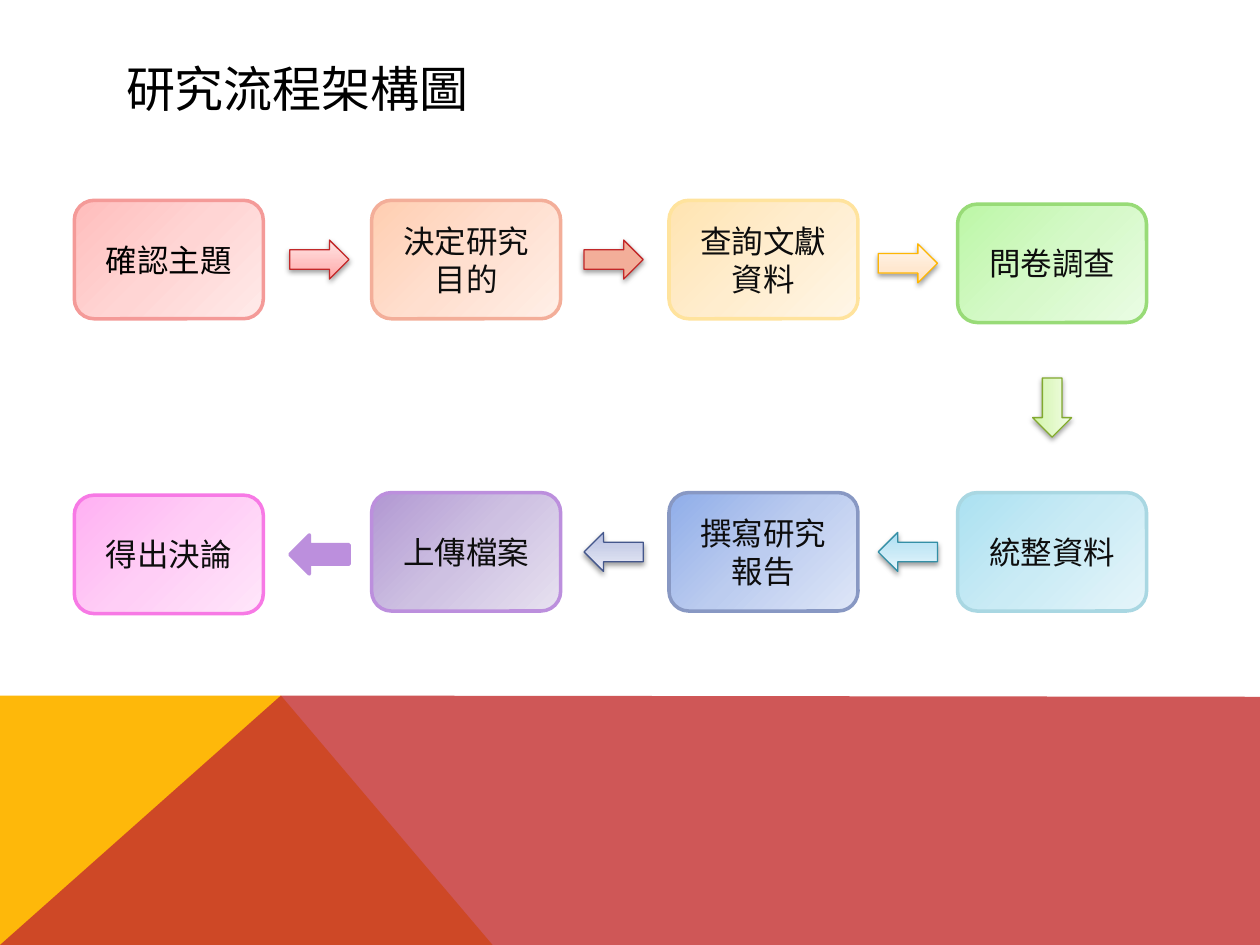
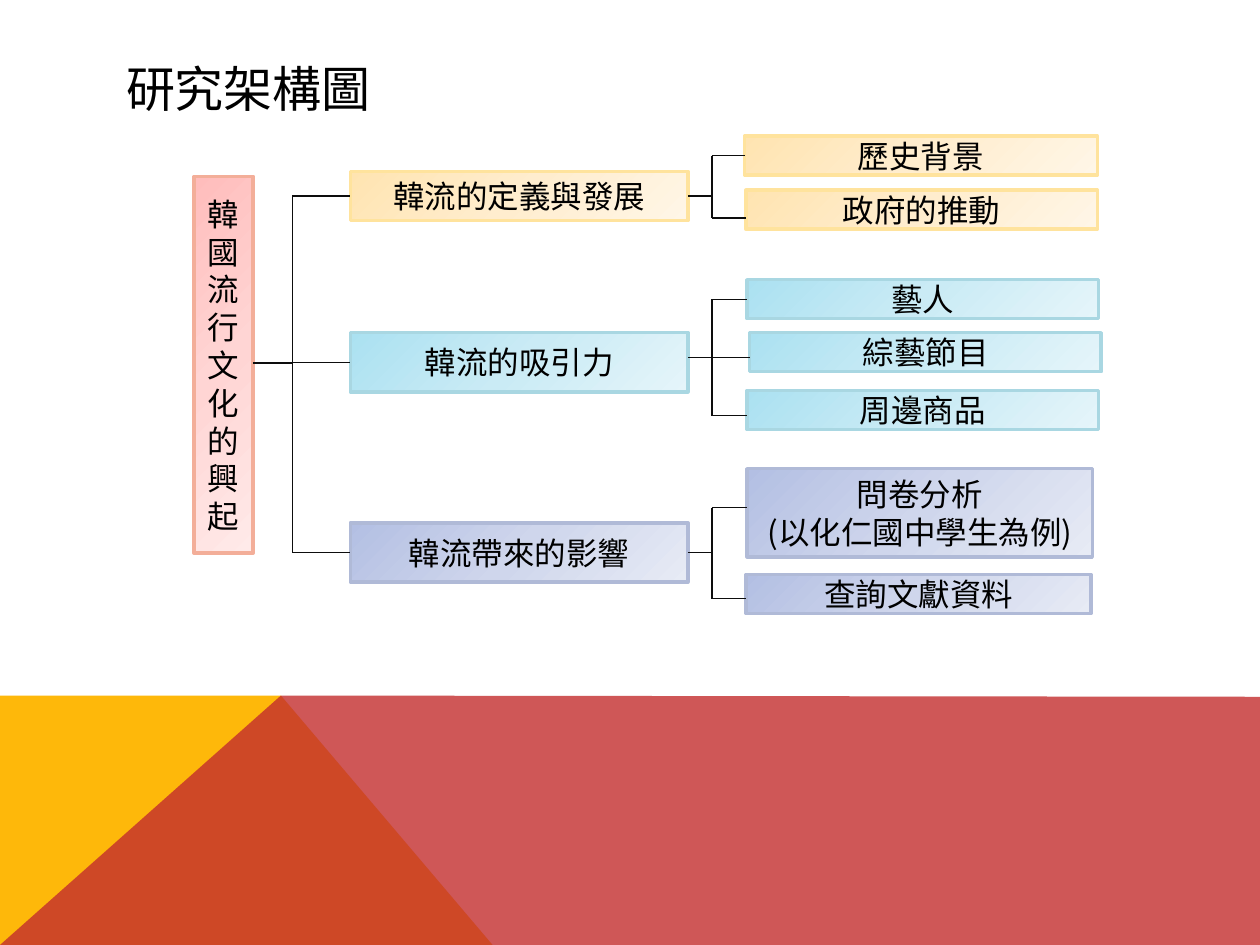
from lxml import etree
from pptx import Presentation
from pptx.dml.color import RGBColor
from pptx.enum.shapes import MSO_CONNECTOR, MSO_SHAPE
from pptx.enum.text import MSO_ANCHOR, PP_ALIGN
from pptx.oxml.ns import nsdecls, qn
from pptx.oxml import parse_xml
from pptx.util import Inches, Pt

W, H = 10, 7.5
FONT = "Noto Sans CJK SC"
BLACK, INK = "000000", "0D0D0D"

# Bottom bands: outline as points, colour, opacity in percent
BANDS = [
    ([(0, 7.5), (0, 5.52), (2.23, 5.52), (3.91, 7.5)], "FEB80A", 100),
    ([(0, 7.5), (2.23, 5.52), (10, 5.53), (10, 7.5)], "C32D2E", 80),
]

# Box looks: three gradient colours, then the border
RED = ("FFBDBC", "FFD5D4", "FFEAE9", "F49A98")
ROOT_RED = RED[:3] + ("F3AE99",)
ORANGE = ("FFCEB1", "FFDFCF", "FFEFE7", "F3AE99")
YELLOW = ("FFE4B1", "FFEDCE", "FFF6E7", "FFE39D")
GREEN = ("BCF7A6", "D5F9C8", "EAFCE4", "98DB77")
CYAN = ("ABE1F1", "CAEBF5", "E5F5FA", "A9D7E2")
BLUE = ("8FADE9", "BCCCEF", "DEE6F7", "8898C3")
PURPLE = ("B197D2", "CEC1E2", "E7E1F0", "BC8FDD")
PINK = ("FFB0F2", "FFCEF6", "FFE6FA", "F779E5")
LAVENDER = ("B3BFE3", "CFD6EC", "E7EBF5", "B0BAD7")

# Slide 1: steps in reading order as (text, look, column, top)
COLUMNS = (0.59, 2.95, 5.31, 7.6)
STEP_W, STEP_H = 1.5, 0.94
STEPS = [
    ("確認主題", RED, 0, 1.59),
    ("決定研究目的", ORANGE, 1, 1.59),
    ("查詢文獻資料", YELLOW, 2, 1.59),
    ("問卷調查", GREEN, 3, 1.62),
    ("統整資料", CYAN, 3, 3.91),
    ("撰寫研究報告", BLUE, 2, 3.91),
    ("上傳檔案", PURPLE, 1, 3.91),
    ("得出決論", PINK, 0, 3.93),
]
# Arrows between consecutive steps: (fill colours, border)
ARROW_W, ARROW_H = 0.47, 0.31
ARROW_X, ARROW_PITCH = 2.3, 2.335
ARROWS = [
    (("FFA3A3", "FFBEBE", "FFE6E6"), "C22829"),
    (("F3AE99",), "C22829"),
    (("FFDFBC", "FFE8D0", "FFF6ED"), "FEB604"),
    (("D0F5A3", "DDF7BF", "F2FDE6"), "82A92F"),
    (("A5DDF3", "C1E6F5", "E6F6FC"), "348FA6"),
    (("B2BBE0", "C9CFE8", "EAECF7"), "44578C"),
    (("BC8FDD",), "BC8FDD"),
]

# Slide 2: root, branches and leaves
ROOT = ("韓國流行文化的興起", (1.54, 1.4, 0.47, 2.99))
ROOT_Y, ROOT_TRUNK, LEAF_TRUNK = 2.88, 2.32, 5.65
BRANCH_X, BRANCH_W = 2.78, 2.68
# Branch: text, look, top, height, stem height (None = middle), leaves
# Leaf: text, box, height of its line (None = middle)
BRANCHES = [
    ("韓流的定義與發展", YELLOW, 1.36, 0.39, None, [
        ("歷史背景", (5.91, 1.08, 2.8, 0.31), None),
        ("政府的推動", (5.92, 1.51, 2.79, 0.31), 1.73)]),
    ("韓流的吸引力", CYAN, 2.64, 0.47, 2.84, [
        ("藝人", (5.93, 2.22, 2.79, 0.31), None),
        ("綜藝節目", (5.95, 2.64, 2.79, 0.31), 2.84),
        ("周邊商品", (5.93, 3.1, 2.79, 0.31), 3.3)]),
    ("韓流帶來的影響", LAVENDER, 4.15, 0.47, None, [
        ("問卷分析\n(以化仁國中學生為例)", (5.93, 3.72, 2.74, 0.7), 4.03),
        ("查詢文獻資料", (5.92, 4.56, 2.74, 0.31), 4.75)]),
]


def rgb(value):
    return RGBColor.from_string(value)


def format_text(tf, size, color, align):
    tf.vertical_anchor = MSO_ANCHOR.MIDDLE
    for p in tf.paragraphs:
        p.alignment = align
        for r in p.runs:
            r.font.size, r.font.bold = Pt(size), False
            r.font.color.rgb = rgb(color)
            r.font.name = FONT
            etree.SubElement(r._r.get_or_add_rPr(), qn("a:ea")).set("typeface", FONT)


def paint(sp, colors, middle, angle, border, width):
    """Solid fill for one colour, linear gradient for three."""
    sp.shadow.inherit = False
    sp.line.color.rgb, sp.line.width = rgb(border), Pt(width)
    sp.fill.solid()
    sp.fill.fore_color.rgb = rgb(colors[0])
    if len(colors) > 1:
        stops = "".join(f'<a:gs pos="{pos * 1000}"><a:srgbClr val="{c}"/></a:gs>'
                        for pos, c in zip((0, middle, 100), colors))
        solid = sp._element.spPr.find(qn("a:solidFill"))
        solid.getparent().replace(solid, parse_xml(
            f'<a:gradFill {nsdecls("a")} rotWithShape="1"><a:gsLst>{stops}</a:gsLst>'
            f'<a:lin ang="{angle * 60000}" scaled="0"/></a:gradFill>'))


def add_box(s, kind, box, text, look, color=BLACK):
    sp = s.shapes.add_shape(kind, *map(Inches, box))
    paint(sp, look[:3], 50, 45, look[3], 2)
    sp.text_frame.text = text
    format_text(sp.text_frame, 18, color, PP_ALIGN.CENTER)
    return sp


def add_arrow(s, x, y, turn, colors, border, raised):
    sp = s.shapes.add_shape(MSO_SHAPE.RIGHT_ARROW, *map(Inches, (x, y, ARROW_W, ARROW_H)))
    sp.rotation = turn
    paint(sp, colors, 35, 270, border, 0.75 if raised else 2)
    if raised:
        effects = sp._element.spPr.find(qn("a:effectLst"))
        effects.append(parse_xml(
            f'<a:outerShdw {nsdecls("a")} blurRad="{Pt(3.1)}" dist="{Pt(1.6)}" dir="5400000" '
            'rotWithShape="0"><a:srgbClr val="000000"><a:alpha val="38000"/></a:srgbClr>'
            '</a:outerShdw>'))


def add_line(s, x1, y1, x2, y2, start=None, end=None):
    c = s.shapes.add_connector(MSO_CONNECTOR.STRAIGHT, *map(Inches, (x1, y1, x2, y2)))
    if start is not None:
        c.begin_connect(start, 3)
    if end is not None:
        c.end_connect(end, 1)
    c.line.color.rgb, c.line.width = rgb(INK), Pt(0.75)
    etree.SubElement(c._element.spPr, qn("a:effectLst"))


def add_slide(prs, title):
    s = prs.slides.add_slide(prs.slide_layouts[5])
    for points, color, opacity in BANDS:
        path = [(Inches(x), Inches(y)) for x, y in points]
        builder = s.shapes.build_freeform(*path[0])
        builder.add_line_segments(path[1:], close=True)
        sp = builder.convert_to_shape()
        sp.shadow.inherit = False
        sp.line.fill.background()
        sp.fill.solid()
        sp.fill.fore_color.rgb = rgb(color)
        if opacity < 100:
            clr = sp._element.spPr.find(".//" + qn("a:srgbClr"))
            etree.SubElement(clr, qn("a:alpha")).set("val", str(opacity * 1000))
    t = s.shapes.title
    t.left, t.top, t.width, t.height = map(Inches, (0.9, 0.4, 8.22, 0.6))
    t.text_frame.text = title
    format_text(t.text_frame, 28, BLACK, PP_ALIGN.LEFT)
    return s


def build_flow(prs):
    s = add_slide(prs, "研究流程架構圖")
    for i, (text, look, col, top) in enumerate(STEPS):
        add_box(s, MSO_SHAPE.ROUNDED_RECTANGLE, (COLUMNS[col], top, STEP_W, STEP_H),
                text, look, INK if i else BLACK)
    # Each arrow lies between two steps, level with the one it points to
    for (_, _, col, top), (_, _, to, to_top), (colors, border) in zip(STEPS, STEPS[1:], ARROWS):
        if col == to:
            turn = 90
            x = COLUMNS[col] + (STEP_W - ARROW_W) / 2
            y = (top + STEP_H + to_top - ARROW_H) / 2
        else:
            turn = 0 if to > col else 180
            x = ARROW_X + ARROW_PITCH * min(col, to)
            y = to_top + (STEP_H - ARROW_H) / 2
        add_arrow(s, x, y, turn, colors, border, raised=border != colors[0])


def build_tree(prs):
    s = add_slide(prs, "研究架構圖")
    text, box = ROOT
    add_box(s, MSO_SHAPE.RECTANGLE, box, text, ROOT_RED)
    add_line(s, box[0] + box[2], ROOT_Y, ROOT_TRUNK, ROOT_Y)
    branch_ys = []
    for text, look, top, height, stem_y, leaves in BRANCHES:
        middle = top + height / 2
        branch_ys.append(middle)
        branch = add_box(s, MSO_SHAPE.RECTANGLE, (BRANCH_X, top, BRANCH_W, height), text, look)
        add_line(s, ROOT_TRUNK, middle, BRANCH_X, middle, end=branch)
        y = stem_y or middle
        add_line(s, BRANCH_X + BRANCH_W, y, LEAF_TRUNK, y, start=None if stem_y else branch)
        leaf_ys = []
        for leaf_text, (x, t, w, h), line_y in leaves:
            leaf = add_box(s, MSO_SHAPE.RECTANGLE, (x, t, w, h), leaf_text, look)
            y = line_y or t + h / 2
            leaf_ys.append(y)
            add_line(s, LEAF_TRUNK, y, x, y, end=None if line_y else leaf)
        add_line(s, LEAF_TRUNK, leaf_ys[0], LEAF_TRUNK, leaf_ys[-1])
    add_line(s, ROOT_TRUNK, branch_ys[0], ROOT_TRUNK, branch_ys[-1])


def main():
    prs = Presentation()
    prs.slide_width, prs.slide_height = Inches(W), Inches(H)
    build_flow(prs)
    build_tree(prs)
    prs.save("out.pptx")


if __name__ == "__main__":
    main()
